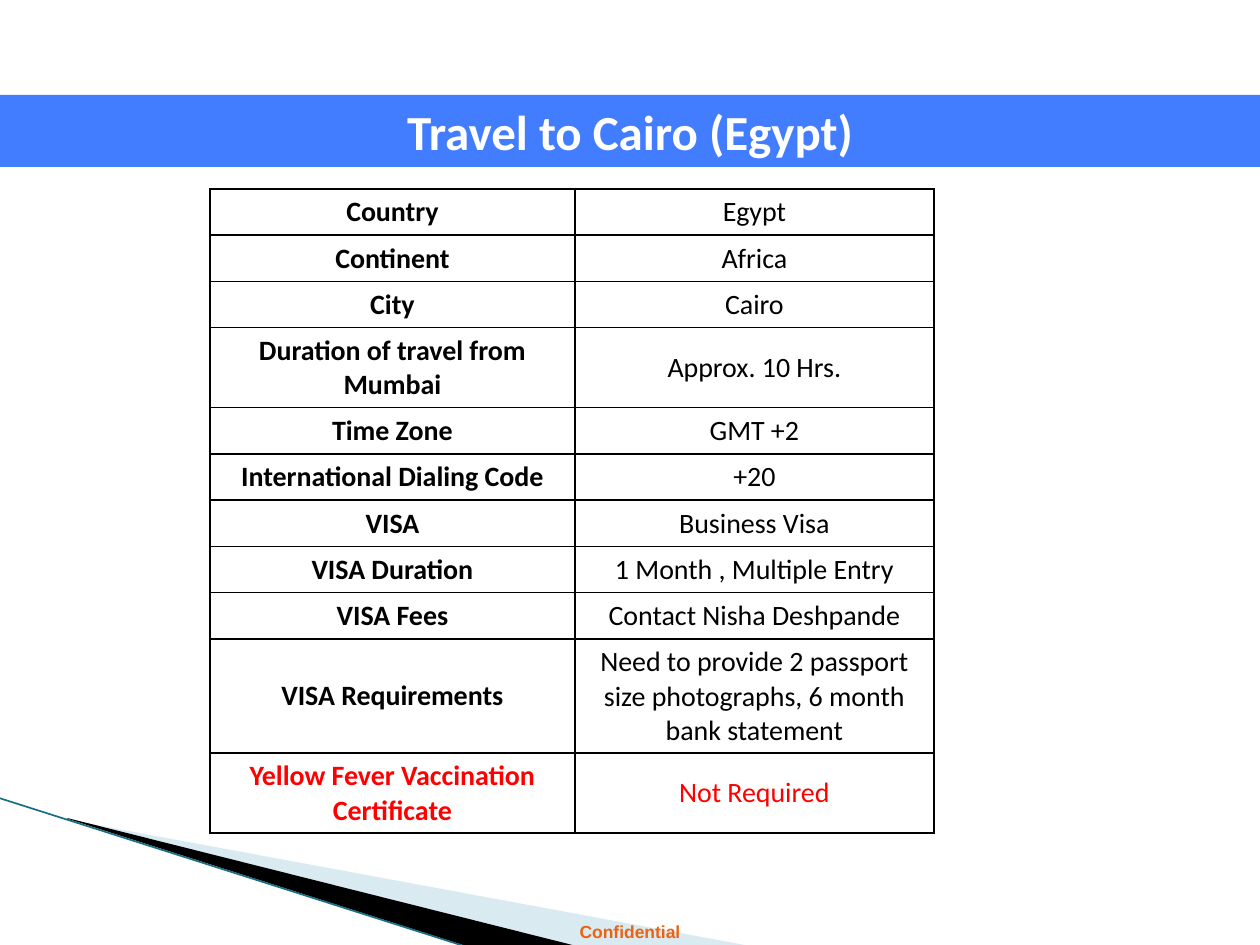
"""Build the Cairo travel fact slide."""
from lxml import etree
from pptx import Presentation
from pptx import util as u
from pptx.dml.color import RGBColor
from pptx.enum import shapes, text
from pptx.oxml import parse_xml
from pptx.oxml.ns import nsdecls, qn

SCALE = 9144000 / 1260
WHITE = RGBColor(0xFF, 0xFF, 0xFF)
BLACK = RGBColor(0, 0, 0)
RED = RGBColor(0xFF, 0, 0)
BLUE = RGBColor(0x43, 0x7D, 0xFF)
ORANGE = RGBColor(0xEB, 0x63, 0x12)
PALE_BLUE = RGBColor(0xA0, 0xCB, 0xDC)
TEAL = RGBColor(0x1A, 0x6E, 0x83)

LINE_HEIGHT = 34
CELL_PADDING = 12
FACTS = [
    ("Country", "Egypt", 1),
    ("Continent", "Africa", 1),
    ("City", "Cairo", 1),
    ("Duration of travel from Mumbai", "Approx. 10 Hrs.", 2),
    ("Time Zone", "GMT +2", 1),
    ("International Dialing Code", "+20", 1),
    ("VISA", "Business Visa", 1),
    ("VISA Duration", "1 Month , Multiple Entry", 1),
    ("VISA Fees", "Contact Nisha Deshpande", 1),
    ("VISA Requirements",
     "Need to provide 2 passport size photographs, 6 month bank statement", 3),
    ("Yellow Fever Vaccination Certificate", "Not Required", 2),
]


def px(*lengths):
    """Turn pixel lengths into EMU."""
    return [u.Emu(round(length * SCALE)) for length in lengths]


class SlideMaker:
    """Hold the deck style and draw on the current page."""

    def __init__(self):
        self.deck = Presentation()
        self.deck.slide_width, self.deck.slide_height = px(1260, 945)
        self.page = self.deck.slides.add_slide(self.deck.slide_layouts[5])

    def add_words(self, frame, words, color, size, bold=True, name="Calibri"):
        """Add one centred paragraph."""
        para = frame.paragraphs[0]
        para.alignment = text.PP_ALIGN.CENTER
        span = para.add_run()
        span.text = words
        span.font.color.rgb = color
        style = {"name": name, "size": u.Pt(size), "bold": bold}
        for key, value in style.items():
            setattr(span.font, key, value)

    def title(self, words, *place):
        """Format the title placeholder as a full-width band."""
        band = self.page.shapes.title
        for key, value in zip(("left", "top", "width", "height"), px(*place)):
            setattr(band, key, value)
        band.fill.solid()
        band.fill.fore_color.rgb = BLUE
        frame = band.text_frame
        frame.auto_size = text.MSO_AUTO_SIZE.NONE
        frame.vertical_anchor = text.MSO_ANCHOR.MIDDLE
        self.add_words(frame, words, WHITE, 28)

    def label(self, words, *place):
        """Add a small wrapped text box."""
        box = self.page.shapes.add_textbox(*px(*place))
        box.text_frame.word_wrap = True
        self.add_words(box.text_frame, words, ORANGE, 10, name="Arial")

    def wedge(self, points, color, opacity=100):
        """Add a filled polygon."""
        start, *rest = points
        builder = self.page.shapes.build_freeform(*start, scale=SCALE)
        builder.add_line_segments(rest, close=True)
        shape = builder.convert_to_shape()
        shape.shadow.inherit = False
        shape.line.fill.background()
        shape.fill.solid()
        shape.fill.fore_color.rgb = color
        if opacity < 100:
            tint = shape._element.spPr.find(f".//{qn('a:srgbClr')}")
            etree.SubElement(tint, qn("a:alpha"), val=str(opacity * 1000))

    def line(self, *ends):
        """Add a thin straight line."""
        edge = self.page.shapes.add_connector(
            shapes.MSO_CONNECTOR.STRAIGHT, *px(*ends))
        edge.line.color.rgb = TEAL
        edge.line.width = u.Pt(0.95)
        etree.SubElement(edge._element.spPr, qn("a:effectLst"))

    def border(self, cell):
        """Draw black borders on all sides of a cell."""
        props = cell._tc.get_or_add_tcPr()
        for side in ("lnL", "lnR", "lnT", "lnB"):
            props.append(parse_xml(
                f'<a:{side} {nsdecls("a")} w="12700"><a:solidFill>'
                f'<a:srgbClr val="{BLACK}"/></a:solidFill></a:{side}>'))

    def table(self, facts, left, top, widths):
        """Add the bordered fact table."""
        heights = [lines * LINE_HEIGHT + CELL_PADDING for *_, lines in facts]
        grid = self.page.shapes.add_table(
            len(facts), len(widths),
            *px(left, top, sum(widths), sum(heights))).table
        for column, width in zip(grid.columns, px(*widths)):
            column.width = width
        for row, height, (*words, _) in zip(grid.rows, px(*heights), facts):
            row.height = height
            color = RED if words == list(facts[-1][:2]) else BLACK
            for index, (cell, entry) in enumerate(zip(row.cells, words)):
                self.border(cell)
                cell.fill.background()
                cell.vertical_anchor = text.MSO_ANCHOR.MIDDLE
                self.add_words(cell.text_frame, entry, color, 16, index == 0)


def main():
    """Draw the slide and save it."""
    maker = SlideMaker()
    maker.wedge([(69, 820), (750, 946), (575, 946), (69, 819)], PALE_BLUE, 40)
    maker.wedge([(67, 818), (576, 946), (469, 947), (68, 819)], BLACK)
    maker.line(-1, 798, 467, 947)
    maker.label("Confidential", 0, 915, 1260, 34)
    maker.title("Travel to Cairo (Egypt)", 0, 95, 1260, 72)
    maker.table(FACTS, 210, 189, (365, 359))
    maker.deck.save("out.pptx")


if __name__ == "__main__":
    main()
